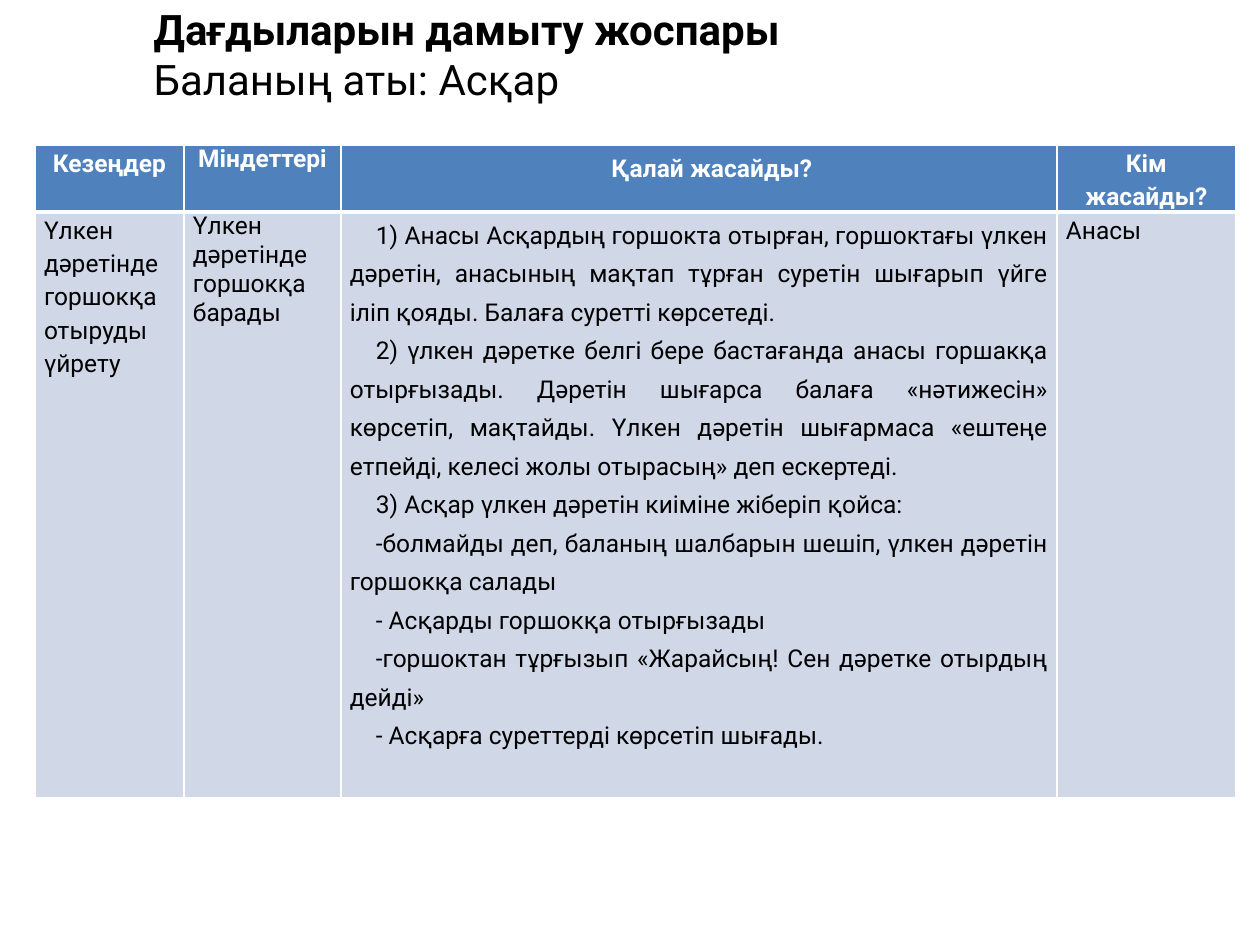
"""Build a one-slide skills development plan with a title and a table."""
from pptx import Presentation
from pptx import util as u
from pptx.dml.color import RGBColor
from pptx.enum import text
from pptx.oxml import parse_xml
from pptx.oxml.ns import nsdecls

SCALE = 914400 // 126
LEFT, CENTER, JUSTIFY = text.PP_ALIGN.LEFT, text.PP_ALIGN.CENTER, text.PP_ALIGN.JUSTIFY
HEADER = [
    (["Кезеңдер"], {"spacing": 1.15}),
    (["Міндеттері"], {}),
    (["Қалай жасайды?"], {"spacing": 1.33, "indent": 26}),
    (["Кім жасайды?"], {"spacing": 1.15}),
]
STEPS = [
    "1) Анасы Асқардың горшокта отырған, горшоктағы үлкен дәретін, анасының мақтап "
    "тұрған суретін шығарып үйге іліп қояды. Балаға суретті көрсетеді.",
    "2) үлкен дәретке белгі бере бастағанда анасы горшакқа отырғызады. Дәретін шығарса "
    "балаға «нәтижесін» көрсетіп, мақтайды. Үлкен дәретін шығармаса «ештеңе етпейді, "
    "келесі жолы отырасың» деп ескертеді.",
    "3) Асқар үлкен дәретін киіміне жіберіп қойса:",
    "-болмайды деп, баланың шалбарын шешіп, үлкен дәретін горшокқа салады",
    "- Асқарды горшокқа отырғызады",
    "-горшоктан тұрғызып «Жарайсың! Сен дәретке отырдың дейді»",
    "- Асқарға суреттерді көрсетіп шығады.",
]
BODY = [
    (["Үлкен дәретінде горшокқа отыруды үйрету"], {"spacing": 1.15}),
    (["Үлкен дәретінде горшокқа барады"], {}),
    (STEPS, {"spacing": 1.33, "indent": 26, "align": JUSTIFY}),
    (["Анасы"], {"spacing": 1.15}),
]


def px(value):
    return u.Emu(value * SCALE)


def color(value):
    return RGBColor.from_string(value)


def write(paragraph, content, size=14, ink="000000", bold=False, align=LEFT,
          spacing=1.0, indent=0, font="Roboto"):
    paragraph.alignment = align
    paragraph.line_spacing = spacing
    paragraph.space_before = paragraph.space_after = u.Pt(0)
    properties = paragraph._p.get_or_add_pPr()
    properties.set("marL", "0")
    properties.set("indent", str(px(indent)))
    run = paragraph.add_run()
    run.text = content
    run.font.name, run.font.size, run.font.bold = font, u.Pt(size), bold
    run.font.color.rgb = color(ink)


class PlanSlide:
    header_fill = "4F81BD"
    header_style = {"ink": "FFFFFF", "bold": True, "align": CENTER}
    header_borders = {"L": 1, "R": 1, "T": 1, "B": 3}
    body_fill = "D0D8E8"
    body_borders = {"L": 1, "R": 1, "T": 3, "B": 1}
    border_color = "FFFFFF"

    def __init__(self, presentation):
        self.slide = presentation.slides.add_slide(presentation.slide_layouts[5])

    def paragraphs(self, frame, lines):
        for index, (content, style) in enumerate(lines):
            paragraph = frame.add_paragraph() if index else frame.paragraphs[0]
            write(paragraph, content, **style)

    def title(self, left, top, width, height, lines):
        shape = self.slide.shapes.title
        shape.left, shape.top = px(left), px(top)
        shape.width, shape.height = px(width), px(height)
        frame = shape.text_frame
        frame.word_wrap = True
        frame.auto_size = text.MSO_AUTO_SIZE.NONE
        frame.vertical_anchor = text.MSO_ANCHOR.TOP
        self.paragraphs(frame, lines)

    def borders(self, cell, widths):
        properties = cell._tc.get_or_add_tcPr()
        for side, points in widths.items():
            properties.append(parse_xml(
                f'<a:ln{side} {nsdecls("a")} w="{u.Pt(points)}"><a:solidFill>'
                f'<a:srgbClr val="{self.border_color}"/></a:solidFill></a:ln{side}>'))

    def cell(self, cell, lines, background, widths, style):
        cell.margin_left = cell.margin_right = px(9)
        cell.margin_top = cell.margin_bottom = 0
        cell.vertical_anchor = text.MSO_ANCHOR.TOP
        self.borders(cell, widths)
        cell.fill.solid()
        cell.fill.fore_color.rgb = color(background)
        self.paragraphs(cell.text_frame, [(line, style) for line in lines])

    def table(self, left, top, columns, rows, header, body):
        table = self.slide.shapes.add_table(
            len(rows), len(columns), px(left), px(top), px(sum(columns)), px(sum(rows))).table
        for column, width in zip(table.columns, columns):
            column.width = px(width)
        for row, height in zip(table.rows, rows):
            row.height = px(height)
        for index, (lines, style) in enumerate(header):
            self.cell(table.cell(0, index), lines, self.header_fill,
                      self.header_borders, self.header_style | style)
        for index, (lines, style) in enumerate(body):
            self.cell(table.cell(1, index), lines, self.body_fill,
                      self.body_borders, style)


def main():
    presentation = Presentation()
    presentation.slide_width, presentation.slide_height = px(1260), px(945)
    plan = PlanSlide(presentation)
    plan.title(115, -3, 942, 152, [
        ("Дағдыларын дамыту жоспары", {"size": 24, "indent": 26, "bold": True}),
        ("Баланың аты: Асқар", {"size": 24, "indent": 26}),
    ])
    plan.table(35, 145, [149, 157, 716, 179], [67, 586], HEADER, BODY)
    presentation.save("out.pptx")


if __name__ == "__main__":
    main()
